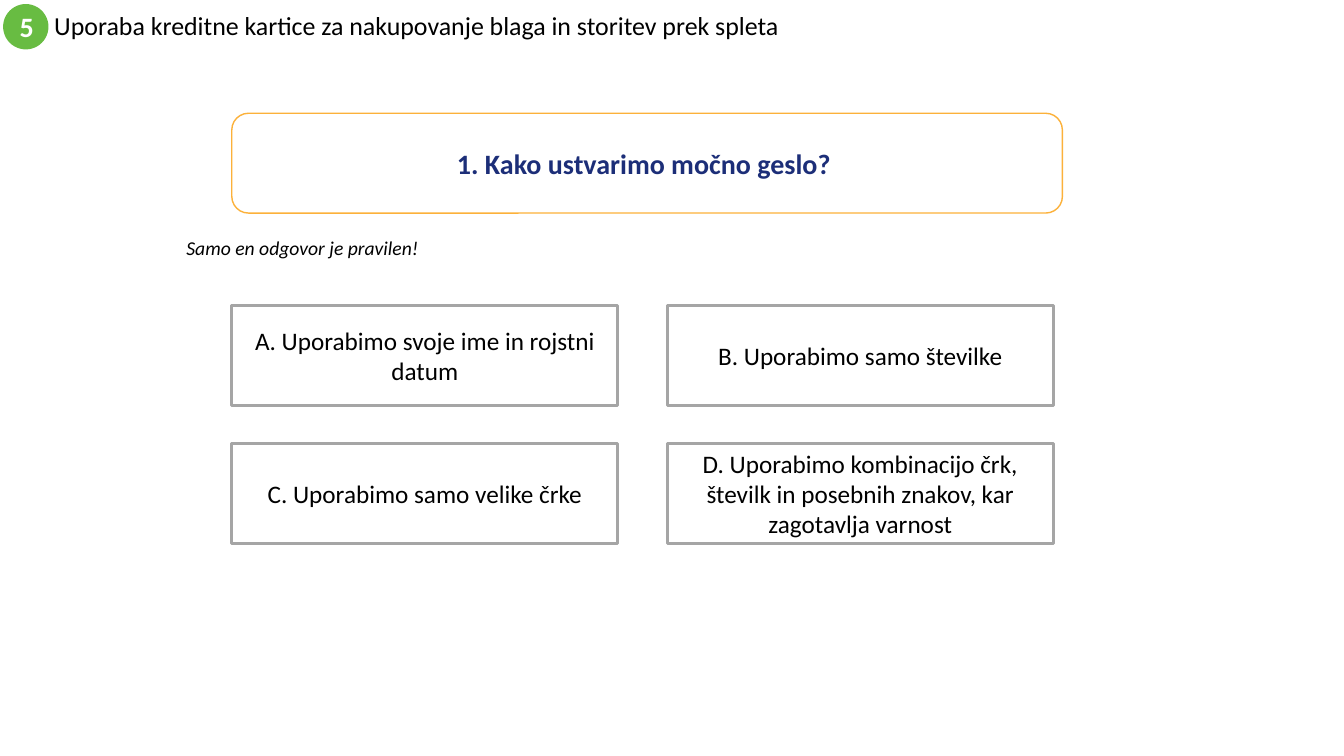
from pptx import Presentation
from pptx import util as u
from pptx.dml import color
from pptx.enum import shapes, text

COLORS = {
    "black": "000000",
    "white": "FFFFFF",
    "green": "68BC42",
    "orange": "FCB13A",
    "navy": "1C2E78",
    "gray": "A5A5A5",
}


def rgb(name):
    return color.RGBColor.from_string(COLORS[name])


def write(box, wording, size, ink, align=text.PP_ALIGN.LEFT, anchor=text.MSO_ANCHOR.MIDDLE):
    frame = box.text_frame
    frame.word_wrap = True
    frame.vertical_anchor = anchor
    paragraph = frame.paragraphs[0]
    paragraph.text = wording
    paragraph.alignment = align
    paragraph.font.name = "Calibri"
    paragraph.font.size = u.Pt(size)
    paragraph.font.color.rgb = rgb(ink)
    return paragraph


prs = Presentation()
prs.slide_width = u.Pt(960)
prs.slide_height = u.Pt(540)
slide = prs.slides.add_slide(prs.slide_layouts[6])
center = text.PP_ALIGN.CENTER

topic = slide.shapes.add_textbox(u.Pt(31.7), u.Pt(2.9), u.Pt(576), u.Pt(32.4))
write(topic, "Uporaba kreditne kartice za nakupovanje blaga in storitev prek spleta", 18.5, "black").line_spacing = 0.9

badge = slide.shapes.add_shape(shapes.MSO_SHAPE.OVAL, u.Pt(2.2), u.Pt(2.9), u.Pt(32.4), u.Pt(32.4))
badge.shadow.inherit = False
badge.fill.solid()
badge.fill.fore_color.rgb = rgb("green")
badge.line.fill.background()
write(badge, "5", 20, "white", center).font.bold = True

left, box_height = 165.6, 71.3
question = slide.shapes.add_shape(
    shapes.MSO_SHAPE.ROUNDED_RECTANGLE, u.Pt(left), u.Pt(80.9), u.Pt(593.3), u.Pt(box_height))
question.shadow.inherit = False
question.fill.solid()
question.fill.fore_color.rgb = rgb("white")
question.line.color.rgb = rgb("orange")
question.line.width = u.Pt(1)
write(question, "1. Kako ustvarimo močno geslo? ", 20, "navy", center).font.bold = True

hint = slide.shapes.add_textbox(u.Pt(126), u.Pt(164.9), u.Pt(210.2), u.Pt(24.5))
write(hint, "Samo en odgovor je pravilen!", 14, "black", anchor=text.MSO_ANCHOR.TOP).font.italic = True

answers = [
    "A. Uporabimo svoje ime in rojstni datum",
    "B. Uporabimo samo številke",
    "C. Uporabimo samo velike črke",
    "D. Uporabimo kombinacijo črk, številk in posebnih znakov, kar zagotavlja varnost",
]
column_step, row_step, answers_top = 311, 98.6, 218.2
for i, wording in enumerate(answers):
    row, column = divmod(i, 2)
    answer = slide.shapes.add_shape(
        shapes.MSO_SHAPE.RECTANGLE,
        u.Pt(left + column * column_step), u.Pt(answers_top + row * row_step),
        u.Pt(275.8), u.Pt(box_height))
    answer.shadow.inherit = False
    answer.fill.solid()
    answer.fill.fore_color.rgb = rgb("white")
    answer.line.color.rgb = rgb("gray")
    answer.line.width = u.Pt(2)
    write(answer, wording, 18, "black", center)

prs.save("out.pptx")
